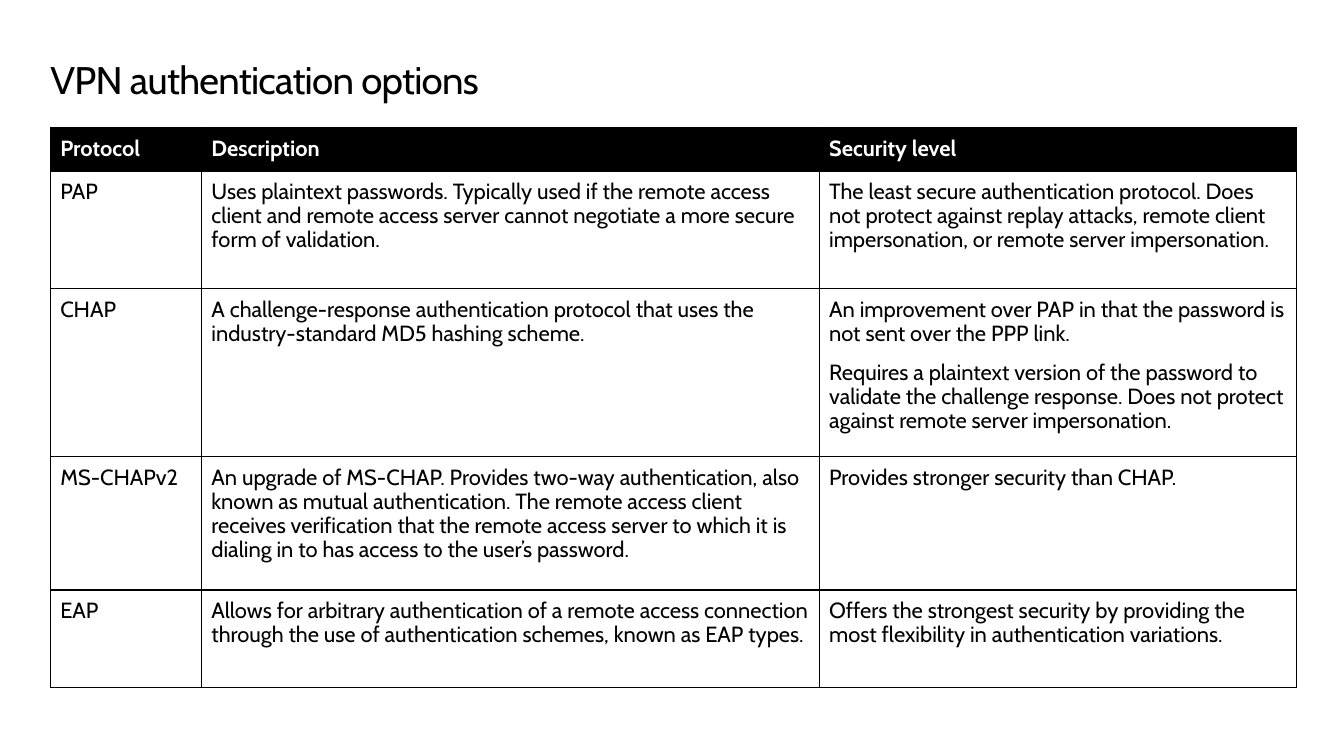
from lxml import etree
from pptx import Presentation
from pptx.dml.color import RGBColor
from pptx.enum.text import MSO_ANCHOR
from pptx.oxml.ns import qn
from pptx.util import Inches, Pt

TOP = MSO_ANCHOR.TOP
MIDDLE = MSO_ANCHOR.MIDDLE

BLACK = "000000"
WHITE = "FFFFFF"

LEFT = 3.75
COLUMN_SHARES = [11.25, 45.96, 35.51]
ROW_SHARES = [5.1, 15.56, 22.22, 17.65, 12.94]
CONTENT_WIDTH = sum(COLUMN_SHARES)

HEADINGS = ["Protocol", "Description", "Security level"]
PROTOCOLS = [
    ["PAP",
     "Uses plaintext passwords. Typically used if the remote access client and remote "
     "access server cannot negotiate a more secure form of validation.",
     "The least secure authentication protocol. Does not protect against replay attacks, "
     "remote client impersonation, or remote server impersonation."],
    ["CHAP",
     "A challenge-response authentication protocol that uses the industry-standard MD5 "
     "hashing scheme.",
     "An improvement over PAP in that the password is not sent over the PPP link.\n"
     "Requires a plaintext version of the password to validate the challenge response. "
     "Does not protect against remote server impersonation."],
    ["MS-CHAPv2",
     "An upgrade of MS-CHAP. Provides two-way authentication, also known as mutual "
     "authentication. The remote access client receives verification that the remote "
     "access server to which it is dialing in to has access to the user’s password.",
     "Provides stronger security than CHAP."],
    ["EAP",
     "Allows for arbitrary authentication of a remote access connection through the use "
     "of authentication schemes, known as EAP types.",
     "Offers the strongest security by providing the most flexibility in authentication "
     "variations."],
]


def color(hex_code):
    return RGBColor.from_string(hex_code)


class SlideBuilder:
    font = "Cabin"
    title_size = 28
    body_size = 16
    line_spacing = 0.9
    paragraph_gap = 0.7
    inset = Inches(0.1)
    border_width = Pt(1)

    def __init__(self, deck):
        self.width = deck.slide_width
        self.height = deck.slide_height
        self.slide = deck.slides.add_slide(deck.slide_layouts[6])

    def across(self, percent):
        return round(self.width * percent / 100)

    def down(self, percent):
        return round(self.height * percent / 100)

    def add_text(self, frame, text, size, ink, bold=False, tracking=None):
        frame.word_wrap = True
        for index, line in enumerate(text.split("\n")):
            paragraph = frame.add_paragraph() if index else frame.paragraphs[0]
            paragraph.line_spacing = self.line_spacing
            paragraph.space_before = Pt(size * self.paragraph_gap if index else 0)
            run = paragraph.add_run()
            run.text = line
            run.font.name = self.font
            run.font.size = Pt(size)
            run.font.bold = bold
            run.font.color.rgb = color(ink)
            if tracking is not None:
                run._r.get_or_add_rPr().set("spc", str(round(tracking * 100)))

    def title(self, text, top, height):
        box = self.slide.shapes.add_textbox(
            self.across(LEFT), self.down(top), self.across(CONTENT_WIDTH), self.down(height))
        frame = box.text_frame
        frame.margin_left = frame.margin_top = frame.margin_bottom = 0
        frame.margin_right = self.inset
        self.add_text(frame, text, self.title_size, BLACK, tracking=-0.5)

    def border(self, cell):
        properties = cell._tc.get_or_add_tcPr()
        for side in ("lnL", "lnR", "lnT", "lnB"):
            line = etree.SubElement(properties, qn("a:" + side), w=str(self.border_width))
            paint = etree.SubElement(line, qn("a:solidFill"))
            etree.SubElement(paint, qn("a:srgbClr"), val=BLACK)

    def cell(self, cell, text, is_heading):
        self.border(cell)
        cell.fill.solid()
        cell.fill.fore_color.rgb = color(BLACK if is_heading else WHITE)
        cell.margin_left = cell.margin_right = self.inset
        cell.margin_top = cell.margin_bottom = self.inset
        cell.vertical_anchor = MIDDLE if is_heading else TOP
        self.add_text(cell.text_frame, text, self.body_size,
                      WHITE if is_heading else BLACK, bold=is_heading)

    def table(self, rows, top):
        table = self.slide.shapes.add_table(
            len(rows), len(COLUMN_SHARES), self.across(LEFT), self.down(top),
            self.across(CONTENT_WIDTH), self.down(sum(ROW_SHARES))).table
        table.horz_banding = False
        for column, share in zip(table.columns, COLUMN_SHARES):
            column.width = self.across(share)
        for row_index, (row, share) in enumerate(zip(table.rows, ROW_SHARES)):
            row.height = self.down(share)
            for cell, text in zip(row.cells, rows[row_index]):
                self.cell(cell, text, is_heading=row_index == 0)


def main():
    deck = Presentation()
    deck.slide_width = Inches(13.6)
    deck.slide_height = Inches(7.65)
    builder = SlideBuilder(deck)
    builder.title("VPN authentication options", top=8.1, height=5.88)
    builder.table([HEADINGS] + PROTOCOLS, top=16.86)
    deck.save("out.pptx")


if __name__ == "__main__":
    main()
